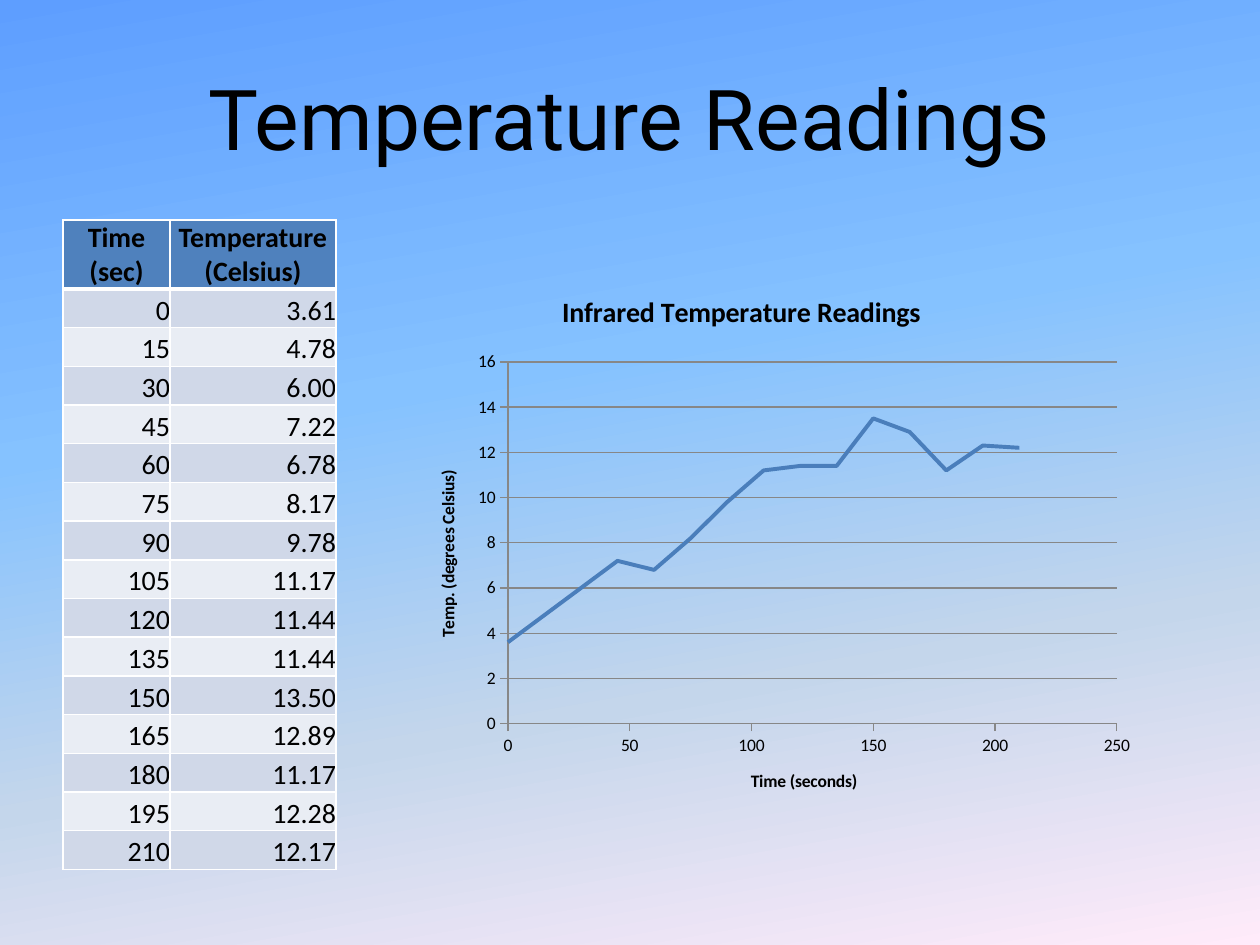
from dataclasses import dataclass

from lxml import etree
from pptx import Presentation
from pptx.chart.data import XyChartData
from pptx.dml.color import RGBColor
from pptx.enum.chart import XL_CHART_TYPE, XL_TICK_MARK
from pptx.enum.text import MSO_ANCHOR, PP_ALIGN
from pptx.oxml.ns import qn
from pptx.util import Pt

PX = 914400 // 126
LINES = XL_CHART_TYPE.XY_SCATTER_LINES_NO_MARKERS
OUTSIDE = XL_TICK_MARK.OUTSIDE
MIDDLE, BOTTOM = MSO_ANCHOR.MIDDLE, MSO_ANCHOR.BOTTOM
CENTER, RIGHT = PP_ALIGN.CENTER, PP_ALIGN.RIGHT

COLORS = {
    "text": "000000", "head": "4F81BD", "odd": "D0D8E8", "even": "E9EDF4",
    "edge": "FFFFFF", "line": "4A7EBB", "grid": "878787",
}
SKY = {0: "5E9EFF", 40: "85C2FF", 70: "C4D6EB", 100: "FFEBFA"}
HEADS = ("Time (sec)", "Temperature (Celsius)")
STEP = 15
TEMPS = (3.61, 4.78, 6.00, 7.22, 6.78, 8.17, 9.78, 11.17, 11.44, 11.44,
         13.50, 12.89, 11.17, 12.28, 12.17)


@dataclass
class Box:
    left: int
    top: int
    width: int
    height: int

    def emu(self) -> tuple:
        return tuple(n * PX for n in (self.left, self.top, self.width, self.height))


@dataclass
class Look:
    """How the cells of one table row are drawn."""
    fill: str
    align: int
    bold: bool = False
    under: int = 1


TITLE = Box(63, 38, 1134, 157)
TABLE = Box(63, 220, 273, 650)
CHART = Box(410, 273, 735, 546)
PLOT = Box(508, 362, 609, 362)
HEAD_H = 69
WIDTHS = (107, 166)


def rgb(name: str) -> RGBColor:
    return RGBColor.from_string(COLORS[name])


def style(font, size: float, bold: bool = False, face: str = "Calibri") -> None:
    font.size, font.bold, font.name = Pt(size), bold, face
    font.color.rgb = rgb("text")


def paint_sky(slide) -> None:
    fill = slide.background.fill
    fill.gradient()
    fill.gradient_angle = 280
    stops = slide.element.find(".//" + qn("a:gsLst"))
    for stop in list(stops):
        stops.remove(stop)
    for pos, color in SKY.items():
        stop = etree.SubElement(stops, qn("a:gs"), pos=str(pos * 1000))
        etree.SubElement(stop, qn("a:srgbClr"), val=color)


def add_title(slide) -> None:
    frame = slide.shapes.add_textbox(*TITLE.emu()).text_frame
    frame.word_wrap = True
    frame.vertical_anchor = MIDDLE
    para = frame.paragraphs[0]
    para.text, para.alignment = "Temperature Readings", CENTER
    style(para.font, 48, face="Roboto")


def add_edges(cell, under: int) -> None:
    props = cell._tc.get_or_add_tcPr()
    for side, width in (("L", 1), ("R", 1), ("T", 1), ("B", under)):
        line = etree.SubElement(props, qn(f"a:ln{side}"), w=str(Pt(width)))
        solid = etree.SubElement(line, qn("a:solidFill"))
        etree.SubElement(solid, qn("a:srgbClr"), val=COLORS["edge"])


def fill_cell(cell, text: str, look: Look) -> None:
    add_edges(cell, look.under)
    cell.fill.solid()
    cell.fill.fore_color.rgb = rgb(look.fill)
    cell.margin_left = cell.margin_right = cell.margin_top = cell.margin_bottom = 0
    cell.vertical_anchor = BOTTOM
    para = cell.text_frame.paragraphs[0]
    para.text, para.alignment = text, look.align
    style(para.font, 16, look.bold)


def add_grid(slide) -> None:
    rows = [HEADS] + [(str(i * STEP), f"{t:.2f}") for i, t in enumerate(TEMPS)]
    table = slide.shapes.add_table(len(rows), len(HEADS), *TABLE.emu()).table
    for col, width in zip(table.columns, WIDTHS):
        col.width = width * PX
    for i, texts in enumerate(rows):
        if i == 0:
            look = Look("head", CENTER, True, 3)
            table.rows[i].height = HEAD_H * PX
        else:
            look = Look("odd" if i % 2 else "even", RIGHT)
            table.rows[i].height = (TABLE.height - HEAD_H) * PX // len(TEMPS)
        for j, text in enumerate(texts):
            fill_cell(table.cell(i, j), text, look)


def set_place(node, index: int, **spots) -> None:
    """Give a chart part a manual layout, as shares of the chart."""
    for old in node.findall(qn("c:layout")):
        node.remove(old)
    layout = etree.Element(qn("c:layout"))
    manual = etree.SubElement(layout, qn("c:manualLayout"))
    for tag, value in spots.items():
        etree.SubElement(manual, qn(f"c:{tag}"), val=str(value))
    node.insert(index, layout)


def set_title(owner, text: str, size: float) -> None:
    para = owner.text_frame.paragraphs[0]
    para.text = text
    style(para.font, size, True)


def set_axis(axis, text: str, top: int, unit: int) -> None:
    axis.minimum_scale, axis.maximum_scale, axis.major_unit = 0, top, unit
    axis.major_tick_mark = OUTSIDE
    axis.format.line.color.rgb = rgb("grid")
    style(axis.tick_labels.font, 10)
    axis.tick_labels.number_format = "General"
    axis.tick_labels.number_format_is_linked = False
    set_title(axis.axis_title, text, 10)


def add_plot(slide) -> None:
    data = XyChartData()
    points = data.add_series("Series 1")
    for i, temp in enumerate(TEMPS):
        points.add_data_point(i * STEP, round(temp, 1))
    chart = slide.shapes.add_chart(LINES, *CHART.emu(), data).chart
    style(chart.font, 10)
    chart.has_legend = False
    chart.has_title = True
    set_title(chart.chart_title, "Infrared Temperature Readings", 16)
    series = chart.plots[0].series[0]
    series.smooth = False
    series.format.line.color.rgb = rgb("line")
    series.format.line.width = Pt(2.25)
    set_axis(chart.category_axis, "Time (seconds)", 250, 50)
    set_axis(chart.value_axis, "Temp. (degrees Celsius)", 16, 2)
    chart.category_axis.has_major_gridlines = False
    chart.value_axis.major_gridlines.format.line.color.rgb = rgb("grid")
    body = chart.element.find(qn("c:chart"))
    set_place(body.find(qn("c:title")), 1, xMode="edge", yMode="edge",
              x=0.2, y=15 / CHART.height)
    set_place(body.find(qn("c:plotArea")), 0, layoutTarget="inner",
              xMode="edge", yMode="edge",
              x=(PLOT.left - CHART.left) / CHART.width,
              y=(PLOT.top - CHART.top) / CHART.height,
              w=PLOT.width / CHART.width,
              h=PLOT.height / CHART.height)


def main() -> None:
    deck = Presentation()
    deck.slide_width, deck.slide_height = 1260 * PX, 945 * PX
    slide = deck.slides.add_slide(deck.slide_layouts[6])
    paint_sky(slide)
    add_title(slide)
    add_grid(slide)
    add_plot(slide)
    deck.save("out.pptx")


if __name__ == "__main__":
    main()
